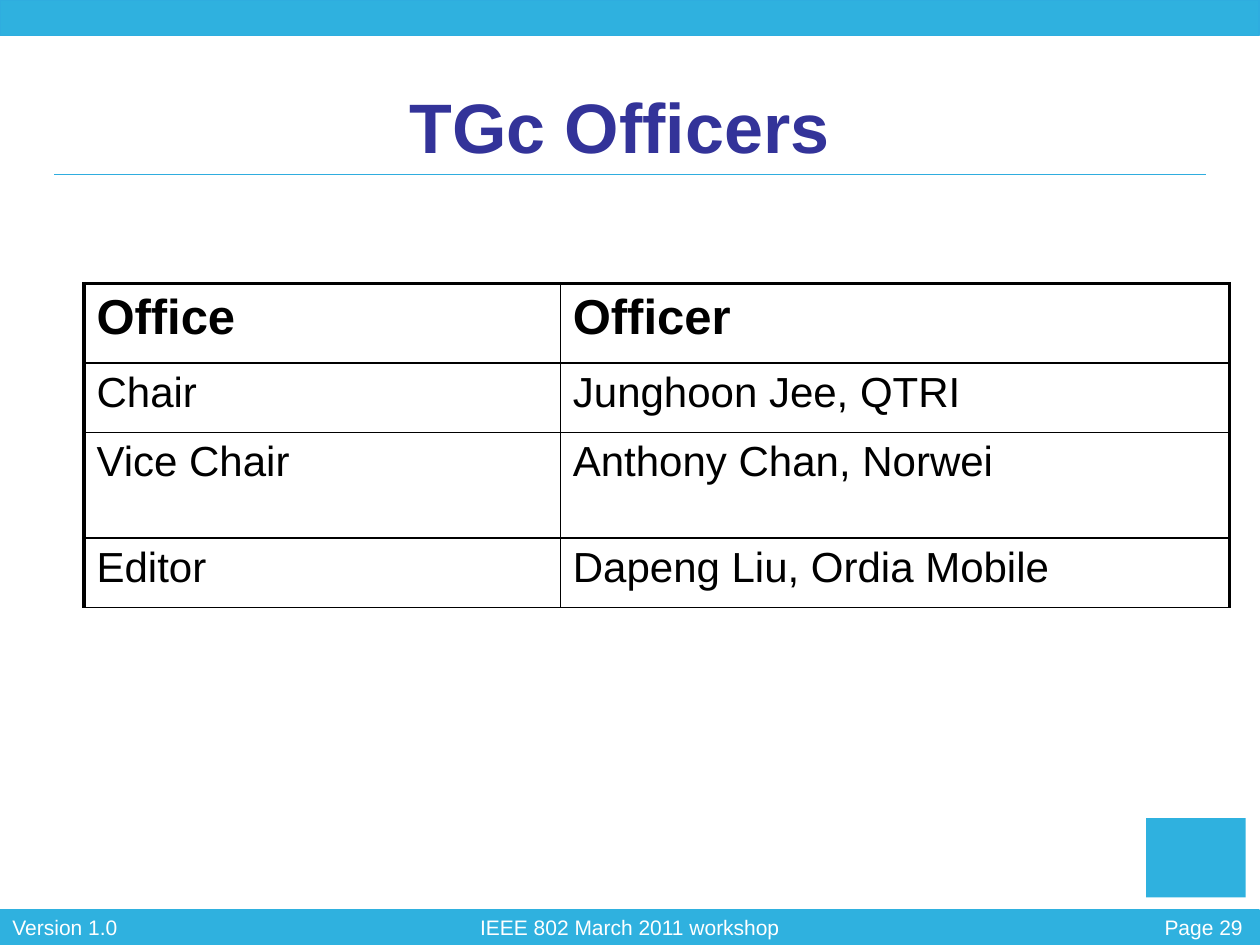
from pptx import Presentation
from pptx.dml.color import RGBColor
from pptx.enum.shapes import MSO_CONNECTOR as Connector, MSO_SHAPE as Shape
from pptx.enum.text import MSO_ANCHOR as Anchor, PP_ALIGN as Align
from pptx.oxml.ns import qn
from pptx.util import Pt
from lxml.etree import SubElement

SKY = RGBColor(0x2F, 0xB1, 0xDF)
RULE_BLUE = RGBColor(0x2F, 0xAD, 0xDF)
NAVY = RGBColor(0x33, 0x33, 0x99)
WHITE = RGBColor(0xFF, 0xFF, 0xFF)
BLACK = RGBColor(0, 0, 0)

OFFICERS = [
    ("Office", "Officer"),
    ("Chair", "Junghoon Jee, QTRI"),
    ("Vice Chair", "Anthony Chan, Norwei"),
    ("Editor", "Dapeng Liu, Ordia Mobile"),
]
COLUMN_WIDTHS = (272.2, 382.3)
ROW_HEIGHTS = (45.4, 39.7, 60.5, 39.7)
THICK, THIN = 2.25, 1


class SlideBuilder:
    font = "Arial"

    def __init__(self, slide):
        self.slide = slide

    def format(self, para, size, color, bold=False, align=Align.LEFT):
        para.alignment = align
        for span in para.runs:
            span.font.name = self.font
            span.font.size = Pt(size)
            span.font.bold = bold
            span.font.color.rgb = color

    def rectangle(self, left, top, width, height, line=None):
        box = self.slide.shapes.add_shape(
            Shape.RECTANGLE, Pt(left), Pt(top), Pt(width), Pt(height))
        box.shadow.inherit = False
        box.fill.solid()
        box.fill.fore_color.rgb = SKY
        if line is None:
            box.line.fill.background()
        else:
            box.line.color.rgb = line
            box.line.width = Pt(0.75)

    def rule(self, left, right, y):
        line = self.slide.shapes.add_connector(
            Connector.STRAIGHT, Pt(left), Pt(y), Pt(right), Pt(y))
        line.line.color.rgb = RULE_BLUE
        line.line.width = Pt(0.75)
        SubElement(line._element.spPr, qn("a:effectLst"))

    def text(self, words, left, top, width, height, size, color,
             bold=False, align=Align.LEFT, anchor=Anchor.TOP):
        box = self.slide.shapes.add_textbox(Pt(left), Pt(top), Pt(width), Pt(height))
        frame = box.text_frame
        frame.word_wrap = True
        frame.vertical_anchor = anchor
        frame.text = words
        self.format(frame.paragraphs[0], size, color, bold, align)

    def border(self, cell, left, right, top, bottom):
        """Draw the four cell borders, each given as a width in points."""
        properties = cell._tc.get_or_add_tcPr()
        sides = {"a:lnL": left, "a:lnR": right, "a:lnT": top, "a:lnB": bottom}
        for tag, width in sides.items():
            line = SubElement(properties, qn(tag), w=str(Pt(width)))
            fill = SubElement(line, qn("a:solidFill"))
            SubElement(fill, qn("a:srgbClr"), val=str(BLACK))

    def table(self, rows, left, top, widths, heights):
        frame = self.slide.shapes.add_table(
            len(rows), len(widths), Pt(left), Pt(top),
            Pt(sum(widths)), Pt(sum(heights)))
        table = frame.table
        table.first_row = table.horz_banding = False
        for column, width in zip(table.columns, widths):
            column.width = Pt(width)
        for r, (words, height) in enumerate(zip(rows, heights)):
            table.rows[r].height = Pt(height)
            header = r == 0
            size = 28 if header else 24
            for c, word in enumerate(words):
                cell = table.cell(r, c)
                cell.text = word
                para = cell.text_frame.paragraphs[0]
                para.space_before = Pt(size * 0.2)
                self.format(para, size, BLACK, bold=header)
                self.border(cell,
                            left=THICK if c == 0 else THIN,
                            right=THICK if c == len(widths) - 1 else THIN,
                            top=THICK if header else THIN,
                            bottom=THIN)
                cell.fill.background()


def main():
    deck = Presentation()
    deck.slide_width, deck.slide_height = Pt(720), Pt(540)
    page = SlideBuilder(deck.slides.add_slide(deck.slide_layouts[6]))

    page.rectangle(0, 520, 719.5, 20, line=SKY)
    page.rectangle(0, 0, 719.5, 20.5, line=RULE_BLUE)
    page.rule(31, 689, 99.75)

    footer = dict(top=519.2, height=21.6, size=12, color=WHITE)
    page.text("Page 29", left=626.5, width=90.7, align=Align.RIGHT, **footer)
    page.text("Version 1.0", left=0, width=90, **footer)
    page.text("IEEE 802 March 2011 workshop", left=0, width=720,
              align=Align.CENTER, **footer)

    page.rectangle(655, 467.5, 56.8, 45.3)
    page.text("TGc Officers", 48, 48, 612, 48, 40, NAVY,
              bold=True, align=Align.CENTER, anchor=Anchor.MIDDLE)
    page.table(OFFICERS, 48, 162, COLUMN_WIDTHS, ROW_HEIGHTS)

    deck.save("out.pptx")


if __name__ == "__main__":
    main()
